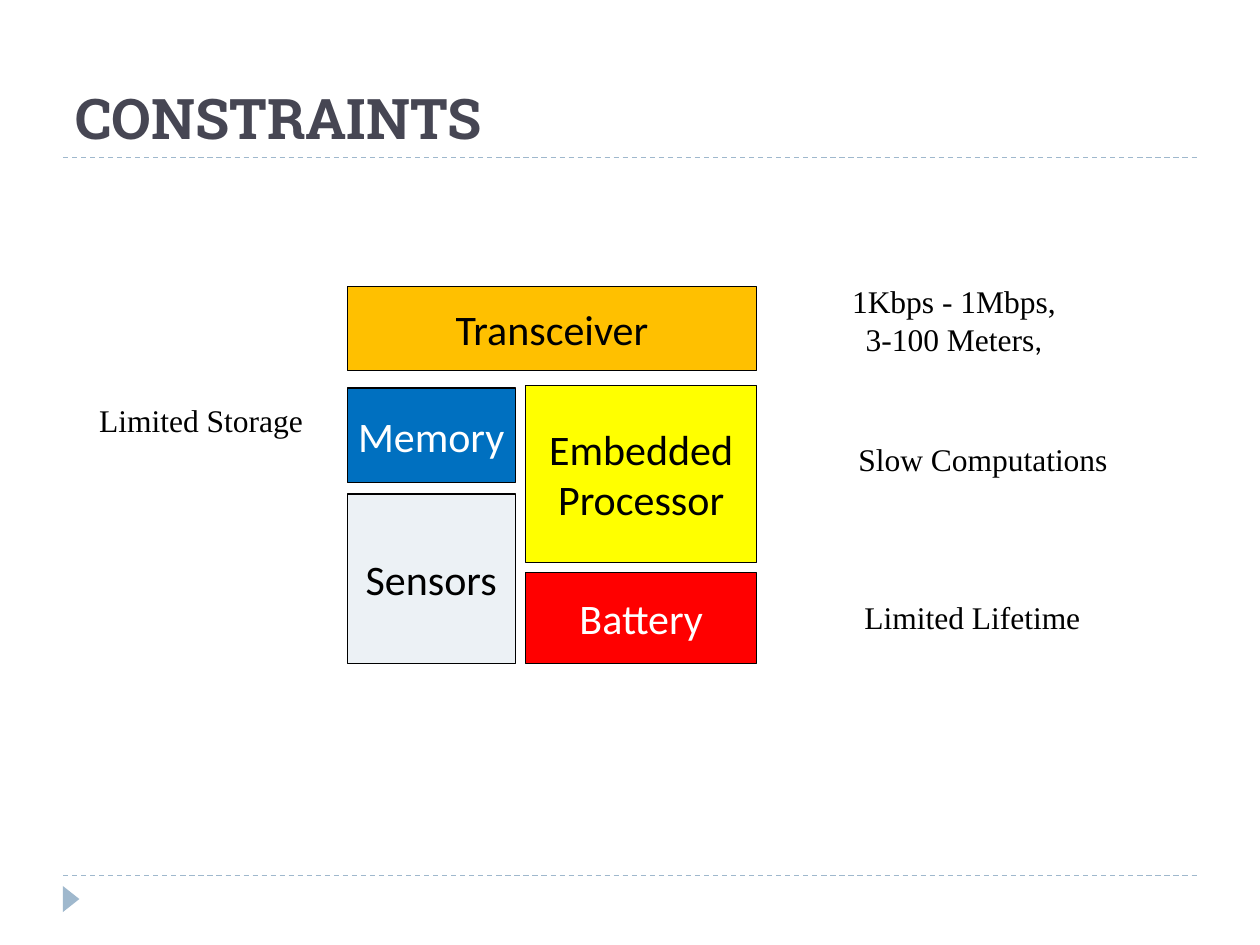
from lxml.etree import SubElement
from pptx import Presentation
from pptx.dml.color import RGBColor
from pptx.enum.dml import MSO_LINE
from pptx.enum.shapes import MSO_CONNECTOR, MSO_SHAPE
from pptx.enum.text import MSO_ANCHOR, MSO_AUTO_SIZE, PP_ALIGN
from pptx.oxml.ns import qn
from pptx.util import Pt

COLORS = {
    "accent": "9FB8CD", "title": "464653", "black": "000000", "white": "FFFFFF",
    "yellow": "FFFF00", "orange": "FFC000", "blue": "0070C0",
    "pale": "ECF1F5", "red": "FF0000",
}


def rgb(name):
    return RGBColor.from_string(COLORS[name])


def write_centered(tf, lines, font, size, color):
    tf.text = "\n".join(lines)
    for p in tf.paragraphs:
        p.alignment = PP_ALIGN.CENTER
        p.font.name = font
        p.font.size = Pt(size)
        p.font.color.rgb = rgb(color)


prs = Presentation()
prs.slide_width, prs.slide_height = Pt(720), Pt(540)
s = prs.slides.add_slide(prs.slide_layouts[5])

# Template rules and corner marker
for y in (500.4, 90):
    line = s.shapes.add_connector(MSO_CONNECTOR.STRAIGHT, Pt(36), Pt(y), Pt(684), Pt(y))
    line.line.color.rgb = rgb("accent")
    line.line.width = Pt(0.75)
    line.line.dash_style = MSO_LINE.DASH
    SubElement(line._element.spPr, qn("a:effectLst"))

marker = s.shapes.add_shape(MSO_SHAPE.ISOSCELES_TRIANGLE, Pt(33.1), Pt(509), Pt(15), Pt(9.5))
marker.rotation = 90
marker.shadow.inherit = False
marker.fill.solid()
marker.fill.fore_color.rgb = rgb("accent")
marker.line.fill.background()

# Title
title = s.shapes.title
title.left, title.top, title.width, title.height = Pt(36), Pt(12.2), Pt(648), Pt(77.8)
tf = title.text_frame
tf.text = "CONSTRAINTS"
tf.vertical_anchor = MSO_ANCHOR.BOTTOM
p = tf.paragraphs[0]
p.alignment = PP_ALIGN.LEFT
p.font.name = "Roboto Slab"
p.font.size = Pt(32)
p.font.bold = True
p.font.color.rgb = rgb("title")

# Sensor node blocks: two columns under a full-width transceiver
LEFT, MIDDLE, RIGHT = 198.4, 300.4, 432.4
LEFT_W, RIGHT_W = 96, RIGHT - MIDDLE
blocks = [
    (["Embedded", "Processor"], MIDDLE, 220.2, RIGHT_W, 101.3, "yellow", "black"),
    (["Transceiver"], LEFT, 163.8, RIGHT - LEFT, 48, "orange", "black"),
    (["Memory"], LEFT, 221.7, LEFT_W, 54, "blue", "white"),
    (["Sensors"], LEFT, 282.3, LEFT_W, 96.8, "pale", "black"),
    (["Battery"], MIDDLE, 327.3, RIGHT_W, 51.8, "red", "white"),
]
for lines, x, y, w, h, fill, color in blocks:
    sp = s.shapes.add_shape(MSO_SHAPE.RECTANGLE, Pt(x), Pt(y), Pt(w), Pt(h))
    sp.shadow.inherit = False
    sp.fill.solid()
    sp.fill.fore_color.rgb = rgb(fill)
    sp.line.color.rgb = rgb("black")
    sp.line.width = Pt(0.75)
    sp.text_frame.word_wrap = False
    sp.text_frame.vertical_anchor = MSO_ANCHOR.MIDDLE
    write_centered(sp.text_frame, lines, "Calibri", 24, color)

# Constraint beside each block
notes = [
    (["Limited Storage"], 48.7, 225.5, 132.5, 29),
    (["Limited Lifetime"], 486.2, 338, 139, 29),
    (["Slow Computations"], 482.5, 247.8, 158.5, 29),
    (["1Kbps - 1Mbps,", "3-100 Meters"], 477.4, 157.5, 135.4, 51),
]
for lines, x, y, w, h in notes:
    box = s.shapes.add_textbox(Pt(x), Pt(y), Pt(w), Pt(h))
    tf = box.text_frame
    tf.word_wrap = len(lines) > 1
    tf.auto_size = MSO_AUTO_SIZE.SHAPE_TO_FIT_TEXT
    write_centered(tf, lines, "Times New Roman", 18, "black")

# The range note, last in the list, ends with a comma in the block font
r = tf.paragraphs[-1].add_run()
r.text = ","
r.font.name = "Calibri"

prs.save("out.pptx")
